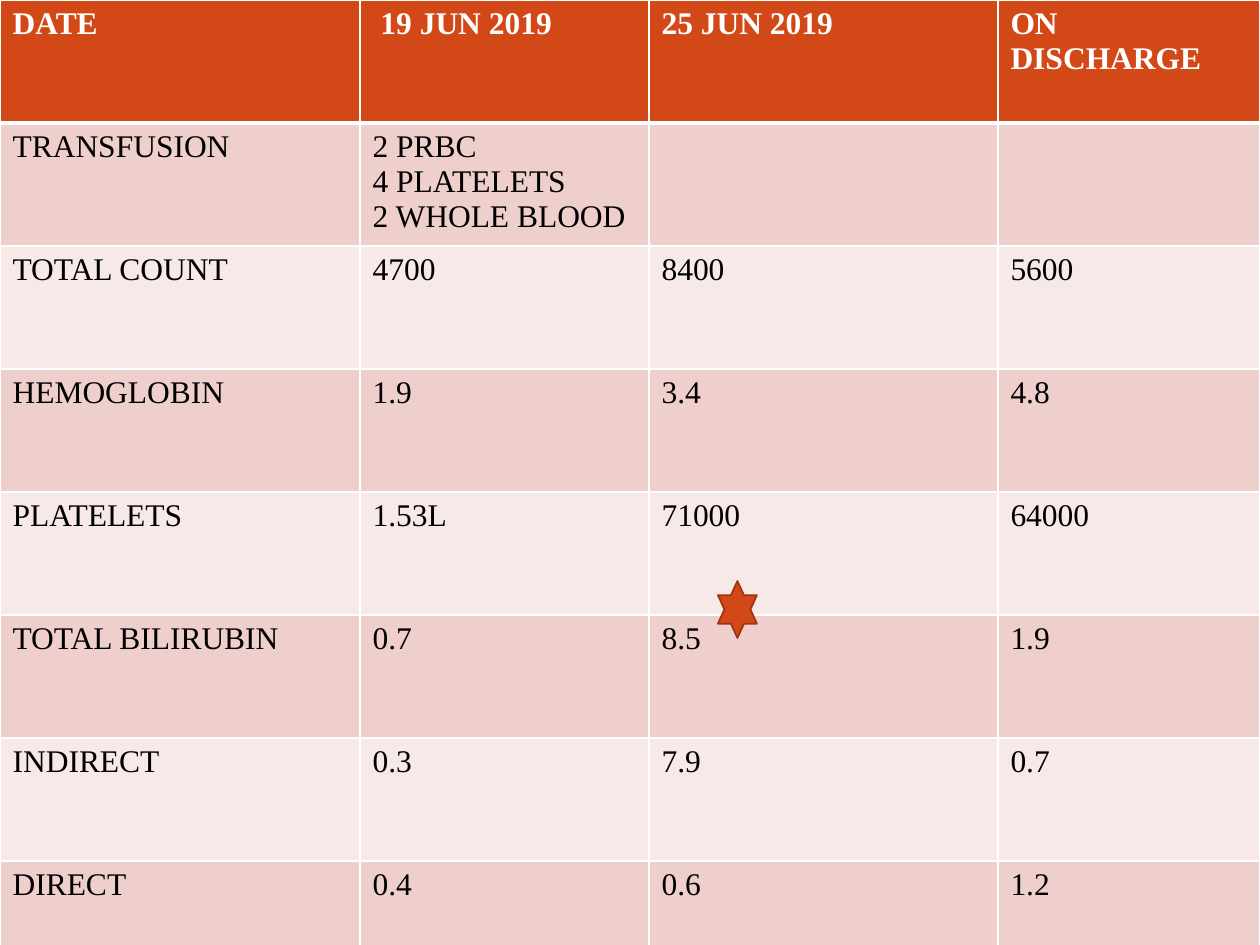
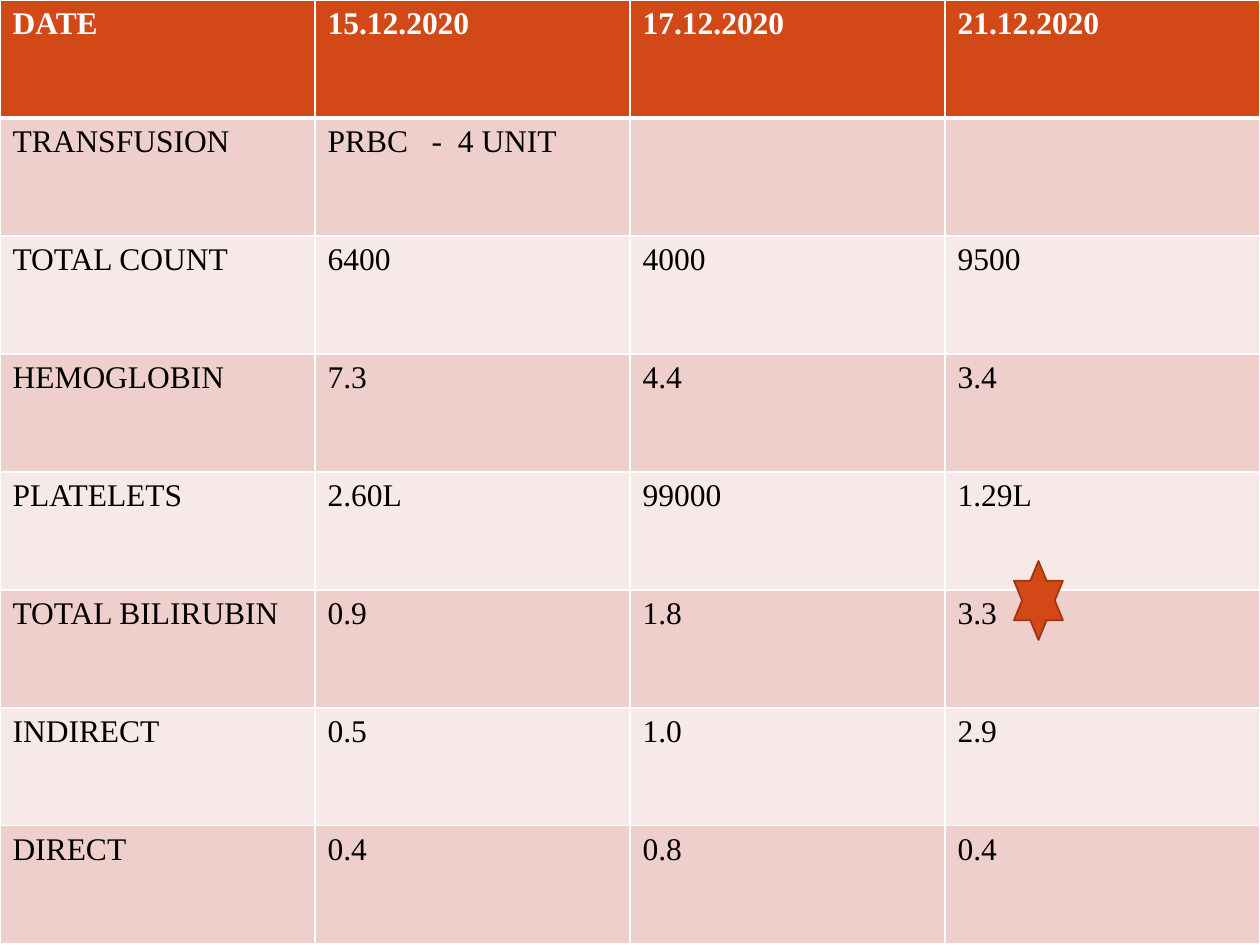
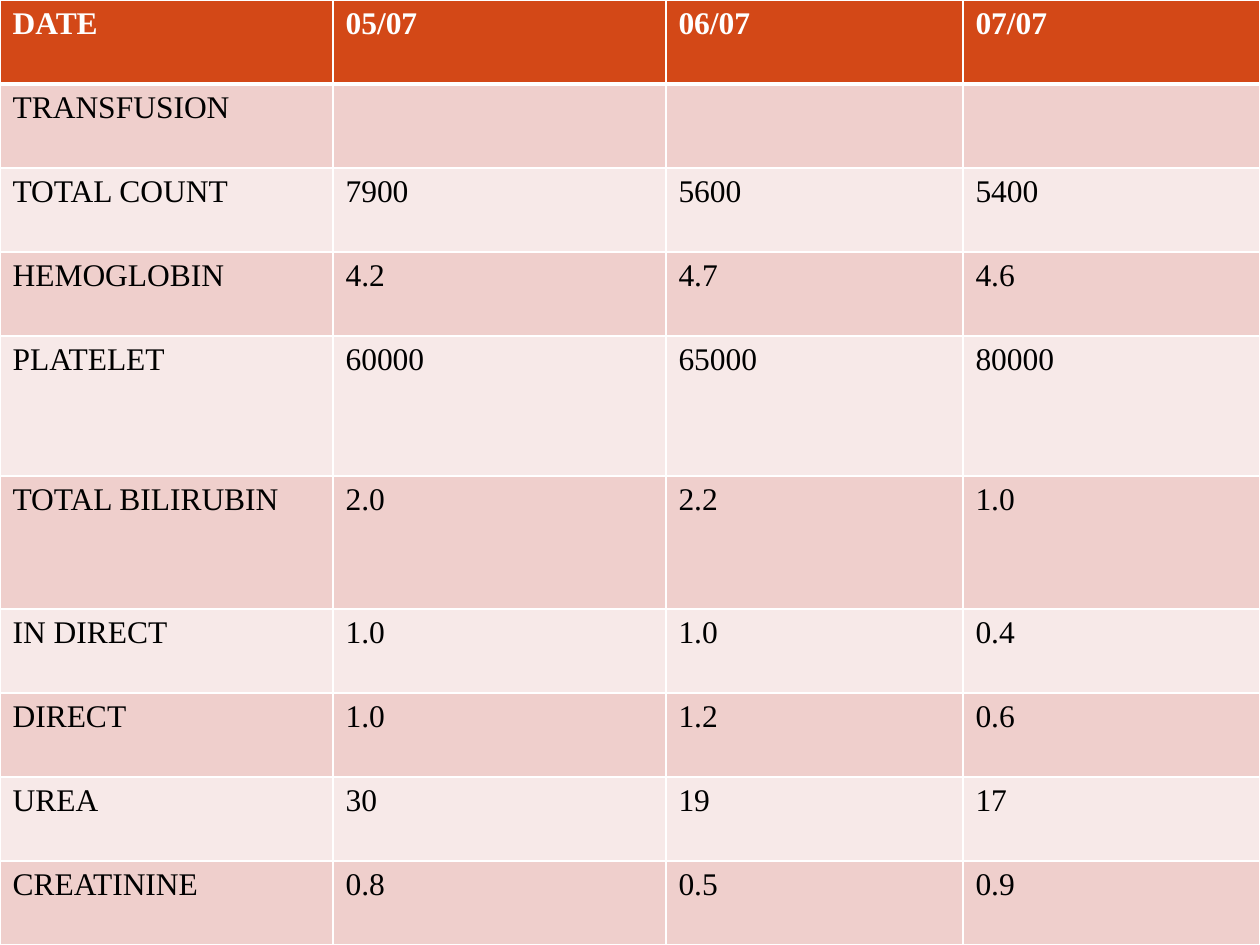
from dataclasses import dataclass
from typing import Optional

from lxml.etree import SubElement
from pptx import Presentation
from pptx.dml.color import RGBColor
from pptx.enum.shapes import MSO_SHAPE
from pptx.oxml.ns import qn
from pptx.slide import Slide
from pptx.table import _Cell
from pptx.util import Emu, Pt

SCALE = 914400 / 126
WIDE, HIGH = 1260, 945
FONT = "Times New Roman"
WHITE = RGBColor(0xFF, 0xFF, 0xFF)
BLACK = RGBColor(0x00, 0x00, 0x00)
RUST = RGBColor(0xD3, 0x48, 0x17)
BROWN = RGBColor(0x9C, 0x35, 0x11)
ROSE = RGBColor(0xEF, 0xCF, 0xCC)
BLUSH = RGBColor(0xF7, 0xE9, 0xE8)


@dataclass(frozen=True)
class Star:
    left: int
    top: int
    width: int
    height: int


@dataclass(frozen=True)
class Report:
    cols: list[int]
    rows: list[int]
    cells: list[list[str]]
    star: Optional[Star] = None


REPORTS = [
    Report(
        [360, 289, 349, 262],
        [123] * 8,
        [
            ["DATE", " 19 JUN 2019", "25 JUN 2019", "ON DISCHARGE"],
            ["TRANSFUSION", "2 PRBC\n4 PLATELETS\n2 WHOLE BLOOD", "", ""],
            ["TOTAL COUNT", "4700", "8400", "5600"],
            ["HEMOGLOBIN", "1.9", "3.4", "4.8"],
            ["PLATELETS", "1.53L", "71000", "64000"],
            ["TOTAL BILIRUBIN", "0.7", "8.5", "1.9"],
            ["INDIRECT", "0.3", "7.9", "0.7"],
            ["DIRECT", "0.4", "0.6", "1.2"],
        ],
        Star(718, 581, 39, 57),
    ),
    Report(
        [315] * 4,
        [118] * 8,
        [
            ["DATE", "15.12.2020", "17.12.2020", "21.12.2020"],
            ["TRANSFUSION", "PRBC   -  4 UNIT", "", ""],
            ["TOTAL COUNT", "6400", "4000", "9500"],
            ["HEMOGLOBIN", "7.3", "4.4", "3.4"],
            ["PLATELETS", "2.60L", "99000", "1.29L"],
            ["TOTAL BILIRUBIN", "0.9", "1.8", "3.3"],
            ["INDIRECT", "0.5", "1.0", "2.9"],
            ["DIRECT", "0.4", "0.8", "0.4"],
        ],
        Star(1014, 561, 49, 79),
    ),
    Report(
        [333, 333, 297, 297],
        [84] * 4 + [140, 133] + [84] * 4,
        [
            ["DATE", "05/07", "06/07", "07/07"],
            ["TRANSFUSION", "", "", ""],
            ["TOTAL COUNT", "7900", "5600", "5400"],
            ["HEMOGLOBIN", "4.2", "4.7", "4.6"],
            ["PLATELET", "60000", "65000", "80000"],
            ["TOTAL BILIRUBIN", "2.0", "2.2", "1.0"],
            ["IN DIRECT", "1.0", "1.0", "0.4"],
            ["DIRECT", "1.0", "1.2", "0.6"],
            ["UREA", "30", "19", "17"],
            ["CREATININE", "0.8", "0.5", "0.9"],
        ],
    ),
]


def px(size: int) -> Emu:
    return Emu(round(size * SCALE))


def edge(cell: _Cell, row: int) -> None:
    props = cell._tc.get_or_add_tcPr()
    sides = {"lnL": 1, "lnR": 1, "lnT": 3 if row == 1 else 1, "lnB": 3 if row == 0 else 1}
    for side, width in sides.items():
        line = SubElement(props, qn(f"a:{side}"), w=str(Pt(width)))
        fill = SubElement(line, qn("a:solidFill"))
        SubElement(fill, qn("a:srgbClr"), val=str(WHITE))


def write(cell: _Cell, text: str, head: bool) -> None:
    frame = cell.text_frame
    for num, line in enumerate(text.split("\n")):
        para = frame.add_paragraph() if num else frame.paragraphs[0]
        run = para.add_run()
        run.text = line
        run.font.name = FONT
        run.font.size = Pt(18)
        run.font.bold = head
        run.font.color.rgb = WHITE if head else BLACK


def add_grid(slide: Slide, report: Report) -> None:
    frame = slide.shapes.add_table(
        len(report.rows), len(report.cols), 0, 0, px(sum(report.cols)), px(sum(report.rows))
    )
    table = frame.table
    for col, width in zip(table.columns, report.cols):
        col.width = px(width)
    for row, height in zip(table.rows, report.rows):
        row.height = px(height)
    for row, texts in enumerate(report.cells):
        shade = RUST if row == 0 else ROSE if row % 2 else BLUSH
        for col, text in enumerate(texts):
            cell = table.cell(row, col)
            edge(cell, row)
            cell.fill.solid()
            cell.fill.fore_color.rgb = shade
            if text:
                write(cell, text, row == 0)


def add_star(slide: Slide, star: Star) -> None:
    shape = slide.shapes.add_shape(
        MSO_SHAPE.STAR_6_POINT, px(star.left), px(star.top), px(star.width), px(star.height)
    )
    shape.shadow.inherit = False
    shape.fill.solid()
    shape.fill.fore_color.rgb = RUST
    shape.line.color.rgb = BROWN
    shape.line.width = Pt(1)


def main() -> None:
    deck = Presentation()
    deck.slide_width, deck.slide_height = px(WIDE), px(HIGH)
    for report in REPORTS:
        slide = deck.slides.add_slide(deck.slide_layouts[6])
        add_grid(slide, report)
        if report.star:
            add_star(slide, report.star)
    deck.save("out.pptx")


if __name__ == "__main__":
    main()
